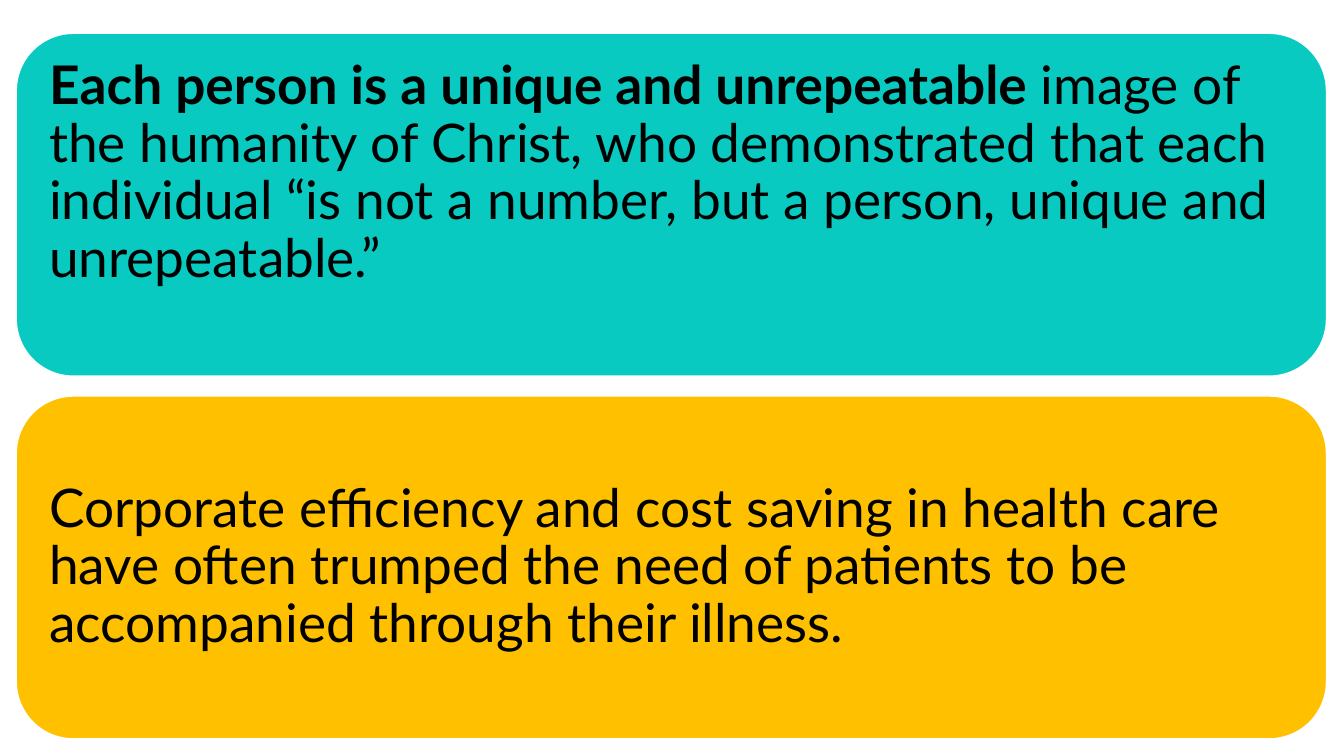
from dataclasses import dataclass

from pptx import Presentation
from pptx.dml.color import RGBColor
from pptx.enum.shapes import MSO_SHAPE as Preset
from pptx.enum.text import MSO_ANCHOR as Anchor, PP_ALIGN as Align
from pptx.util import Cm, Pt

TEAL = RGBColor(0x08, 0xCA, 0xC1)
AMBER = RGBColor(0xFF, 0xC0, 0x00)
WHITE = RGBColor(0xFF, 0xFF, 0xFF)
BLACK = RGBColor(0x00, 0x00, 0x00)

CARD_LEFT, CARD_TOP = Cm(0.41), Cm(0.84)
CARD_WIDTH, CARD_HEIGHT = Cm(33.02), Cm(8.64)
CARD_GAP = Cm(0.5)
PADDING = Cm(0.41)


@dataclass(frozen=True)
class Card:
    fill: RGBColor
    lead: str
    body: str
    lift: float = 0  # extra bottom padding in cm


CARDS = [
    Card(
        TEAL,
        "Each person is a unique and unrepeatable ",
        "image of the humanity of Christ, who demonstrated that each individual "
        "“is not a number, but a person, unique and unrepeatable.”",
        lift=1.57,
    ),
    Card(
        AMBER,
        "",
        "Corporate efficiency and cost saving in health care have often trumped "
        "the need of patients to be accompanied through their illness.",
    ),
]


def draw_card(slide, card: Card, top: int) -> None:
    panel = slide.shapes.add_shape(
        Preset.ROUNDED_RECTANGLE, CARD_LEFT, top, CARD_WIDTH, CARD_HEIGHT
    )
    panel.shadow.inherit = False
    panel.fill.solid()
    panel.fill.fore_color.rgb = card.fill
    panel.line.color.rgb = WHITE
    panel.line.width = Pt(1)

    frame = panel.text_frame
    frame.word_wrap = True
    frame.vertical_anchor = Anchor.MIDDLE
    frame.margin_left = frame.margin_right = frame.margin_top = PADDING
    frame.margin_bottom = PADDING + Cm(card.lift)

    statement = frame.paragraphs[0]
    statement.alignment = Align.LEFT
    statement.line_spacing = 0.9
    statement.font.name = "Lato"
    statement.font.size = Pt(38)
    statement.font.color.rgb = BLACK
    if card.lead:
        lead = statement.add_run()
        lead.text = card.lead
        lead.font.bold = True
    statement.add_run().text = card.body


def main() -> None:
    deck = Presentation()
    deck.slide_width, deck.slide_height = Cm(33.87), Cm(19.05)
    slide = deck.slides.add_slide(deck.slide_layouts[6])
    for row, card in enumerate(CARDS):
        draw_card(slide, card, CARD_TOP + row * (CARD_HEIGHT + CARD_GAP))
    deck.save("out.pptx")


if __name__ == "__main__":
    main()
